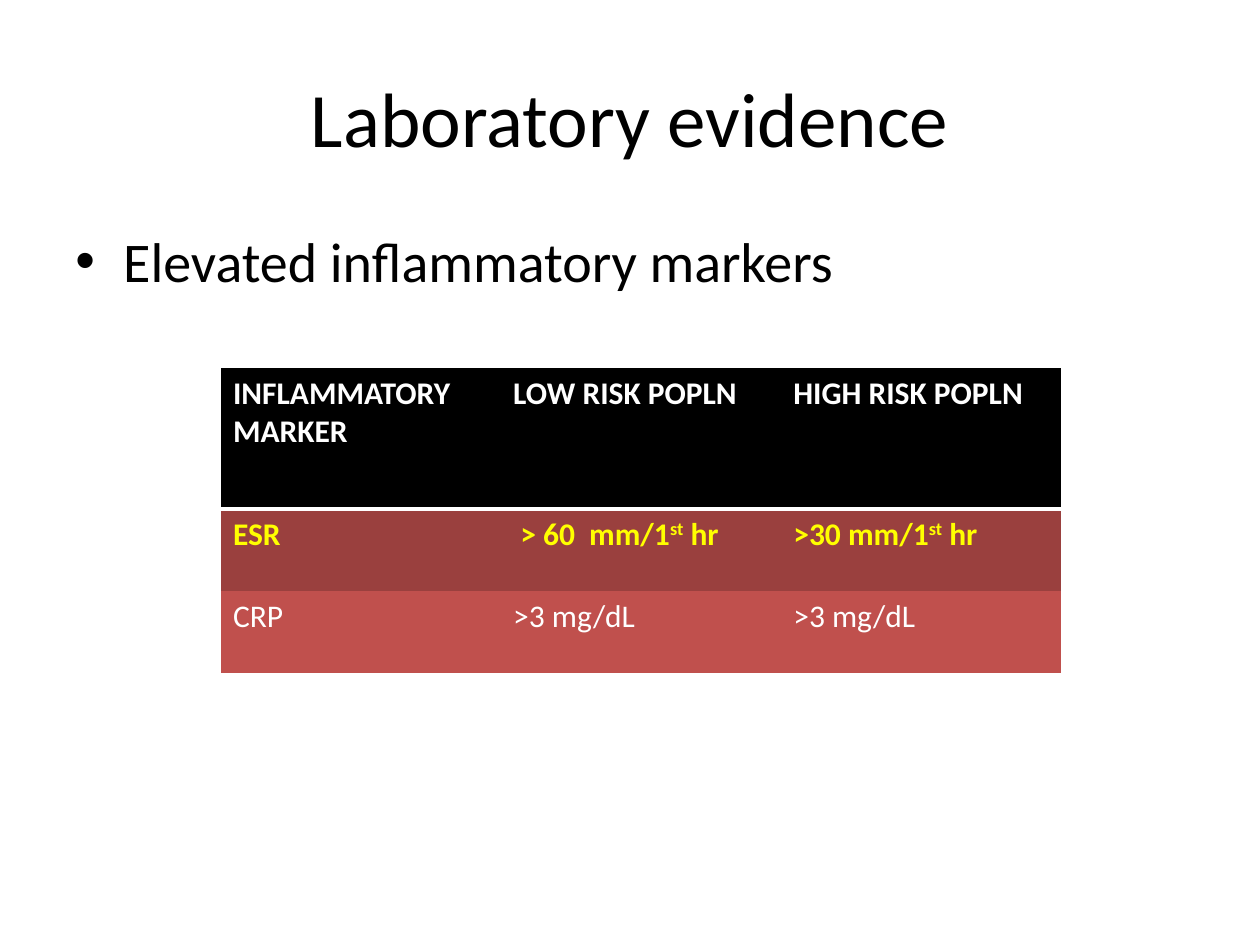
from lxml import etree
from pptx import Presentation
from pptx.dml.color import RGBColor
from pptx.enum.text import MSO_ANCHOR as ANCHOR, PP_ALIGN as ALIGN
from pptx.oxml.ns import qn
from pptx.util import Inches, Pt

FONT = "Calibri"
BLACK, WHITE, YELLOW = "000000", "FFFFFF", "FFFF00"
NO_STYLE = "{2D5ABB26-0587-4C30-8999-92F81FD0307C}"

HEADER = ["INFLAMMATORY MARKER", "LOW RISK POPLN", "HIGH RISK POPLN"]
# Every second piece of a cell split at "^" is a superscript.
ROWS = [
    (1.12, BLACK, WHITE, True, HEADER),
    (0.65, "9A403E", YELLOW, True, ["ESR", " > 60  mm/1^st^ hr", ">30 mm/1^st^ hr"]),
    (0.65, "C0504D", WHITE, False, ["CRP", ">3 mg/dL", ">3 mg/dL"]),
]


def rgb(value):
    return RGBColor.from_string(value)


def add_run(p, text, size, color, bold=False):
    r = p.add_run()
    r.text = text
    r.font.color.rgb = rgb(color)
    for name, value in {"name": FONT, "size": Pt(size), "bold": bold}.items():
        setattr(r.font, name, value)
    return r


def add_text(slide, box, text, size, anchor, align):
    tf = slide.shapes.add_textbox(*map(Inches, box)).text_frame
    tf.word_wrap = True
    tf.vertical_anchor = anchor
    p = tf.paragraphs[0]
    p.alignment = align
    add_run(p, text, size, BLACK)
    return p


def add_title(slide, box):
    add_text(slide, box, "Laboratory evidence", 44, ANCHOR.MIDDLE, ALIGN.CENTER)


def add_body(slide, box):
    p = add_text(slide, box, "Elevated inflammatory markers", 32, ANCHOR.TOP, ALIGN.LEFT)
    p.space_before = Pt(6.4)
    pPr = p._p.get_or_add_pPr()
    indent = Inches(0.38)
    pPr.set("marL", str(indent))
    pPr.set("indent", str(-indent))
    etree.SubElement(pPr, qn("a:buFont")).set("typeface", "Arial")
    etree.SubElement(pPr, qn("a:buChar")).set("char", "•")


def add_bottom_border(cell, color, width):
    ln = etree.Element(qn("a:lnB"), w=str(Pt(width)))
    fill = etree.SubElement(ln, qn("a:solidFill"))
    etree.SubElement(fill, qn("a:srgbClr")).set("val", color)
    cell._tc.get_or_add_tcPr().insert(0, ln)


def add_marker_table(slide, box):
    frame = slide.shapes.add_table(len(ROWS), len(HEADER), *map(Inches, box))
    table = frame.table
    table.horz_banding = False
    table._tbl.tblPr.find(qn("a:tableStyleId")).text = NO_STYLE
    for i, (height, fill, color, bold, texts) in enumerate(ROWS):
        table.rows[i].height = Inches(height)
        for cell, text in zip(table.rows[i].cells, texts):
            cell.fill.solid()
            cell.fill.fore_color.rgb = rgb(fill)
            p = cell.text_frame.paragraphs[0]
            for n, piece in enumerate(text.split("^")):
                r = add_run(p, piece, 18, color, bold)
                if n % 2:
                    r._r.get_or_add_rPr().set("baseline", "30000")
            if i == 0:
                add_bottom_border(cell, WHITE, 2)


def main():
    prs = Presentation()
    prs.slide_width, prs.slide_height = Inches(10), Inches(7.5)
    slide = prs.slides.add_slide(prs.slide_layouts[6])
    add_title(slide, (0.5, 0.3, 9, 1.25))
    add_body(slide, (0.5, 1.75, 9, 4.95))
    add_marker_table(slide, (1.75, 2.92, 6.67, 2.42))
    prs.save("out.pptx")


if __name__ == "__main__":
    main()
